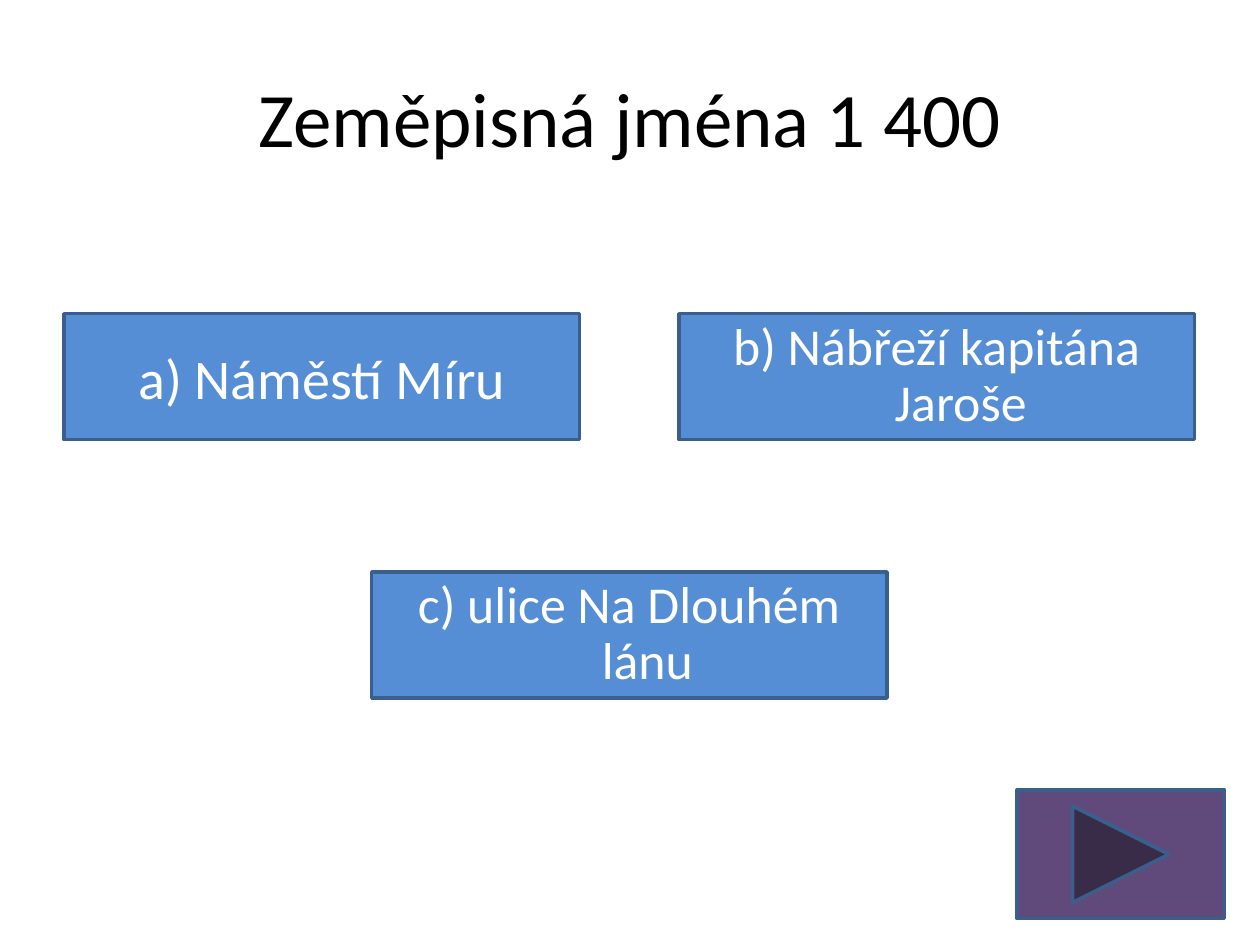
"""Build a quiz slide with three answer buttons and a forward button."""
from pptx import Presentation
from pptx.dml.color import RGBColor
from pptx.enum.shapes import MSO_SHAPE as Shape
from pptx.enum.text import MSO_ANCHOR as Anchor, PP_ALIGN as Align
from pptx.util import Inches, Pt

QUESTION = "Zeměpisná jména 1 400"
ANSWERS = [
    {"text": "c) ulice Na Dlouhém lánu ", "column": 1, "row": 1, "size": 29.6, "spacing": 0.9},
    {"text": "b) Nábřeží kapitána Jaroše", "column": 2, "row": 0, "size": 29.6, "spacing": 0.9},
    {"text": "a) Náměstí Míru", "column": 0, "row": 0, "size": 32, "spacing": 1.0},
]
COLORS = {"ink": "000000", "answer": "558ED5", "edge": "3A5F8C",
          "forward": "604A7B", "label": "FFFFFF"}
FONT = "Calibri"
WIDTH, HEIGHT = 10, 7.5
GRID_LEFT, GRID_TOP = 0.51, 2.49
COLUMN_STEP, ROW_STEP = 2.44, 2.05
ANSWER_WIDTH, ANSWER_HEIGHT = 4.09, 1
HANGING = 0.38


def write(holder, text, *, size, color, spacing=1.0, before=0, hanging=0):
    frame = holder.text_frame
    frame.word_wrap = True
    frame.vertical_anchor = Anchor.MIDDLE
    line = frame.paragraphs[0]
    line.alignment = Align.CENTER
    line.line_spacing = spacing
    line.space_before = Pt(before)
    if hanging:
        layout = line._p.get_or_add_pPr()
        layout.set("marL", str(Inches(hanging)))
        layout.set("indent", str(-Inches(hanging)))
    run = line.add_run()
    run.text = text
    run.font.name = FONT
    run.font.size = Pt(size)
    run.font.color.rgb = RGBColor.from_string(COLORS[color])


def add_button(slide, kind, box, fill):
    button = slide.shapes.add_shape(kind, *map(Inches, box))
    button.shadow.inherit = False
    button.fill.solid()
    button.fill.fore_color.rgb = RGBColor.from_string(COLORS[fill])
    button.line.color.rgb = RGBColor.from_string(COLORS["edge"])
    button.line.width = Pt(2)
    return button


def main():
    deck = Presentation()
    deck.slide_width, deck.slide_height = Inches(WIDTH), Inches(HEIGHT)
    slide = deck.slides.add_slide(deck.slide_layouts[6])

    title_box = (0.05 * WIDTH, 0.04 * HEIGHT, 0.9 * WIDTH, 1.25)
    title = slide.shapes.add_textbox(*map(Inches, title_box))
    write(title, QUESTION, size=44, color="ink")

    for answer in ANSWERS:
        box = (GRID_LEFT + answer["column"] * COLUMN_STEP,
               GRID_TOP + answer["row"] * ROW_STEP, ANSWER_WIDTH, ANSWER_HEIGHT)
        button = add_button(slide, Shape.ACTION_BUTTON_CUSTOM, box, "answer")
        write(button, answer["text"], size=answer["size"], color="label",
              spacing=answer["spacing"], before=round(0.2 * answer["size"], 1),
              hanging=HANGING)

    add_button(slide, Shape.ACTION_BUTTON_FORWARD_OR_NEXT, (8.07, 6.27, 1.65, 1.02), "forward")
    deck.save("out.pptx")


if __name__ == "__main__":
    main()
